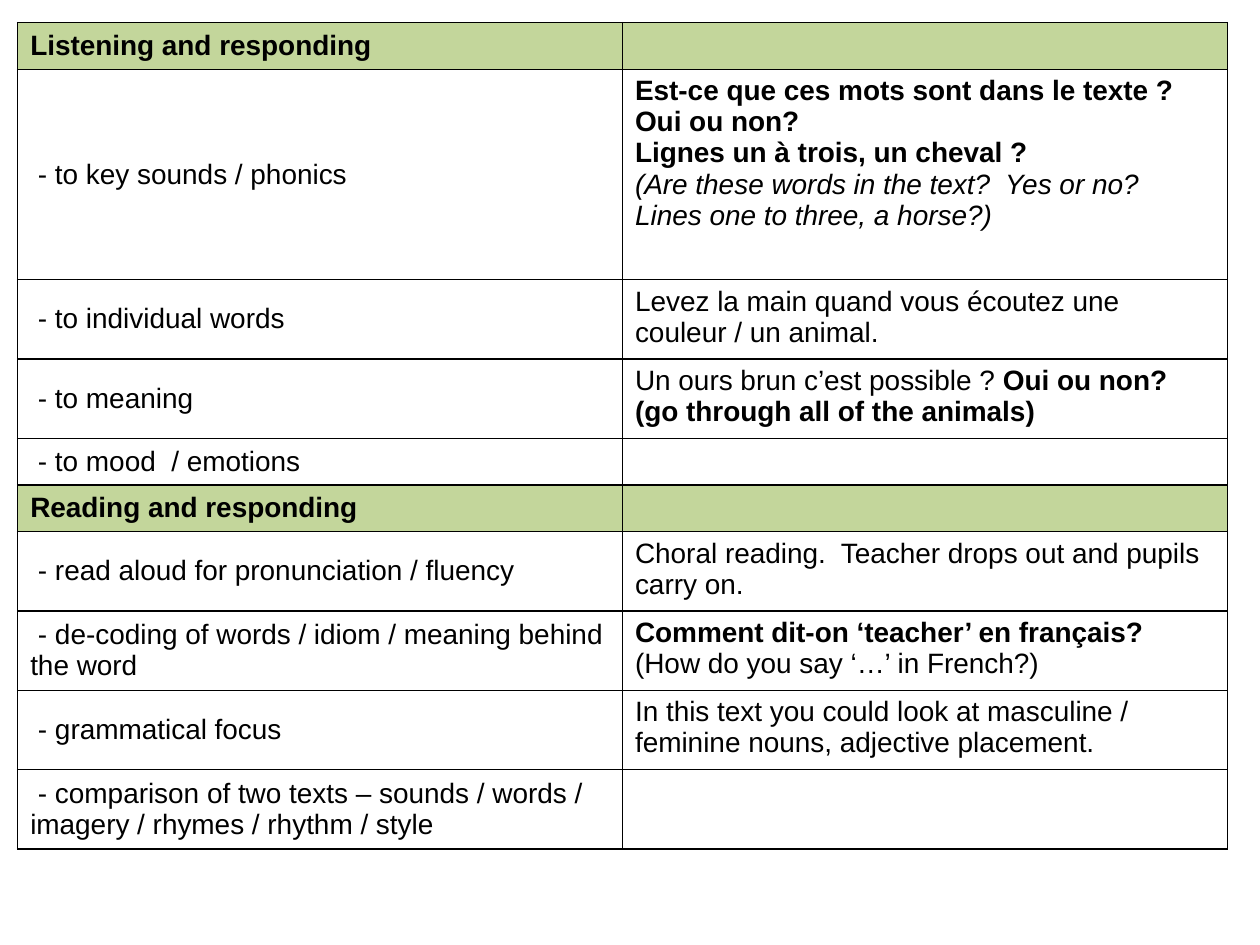
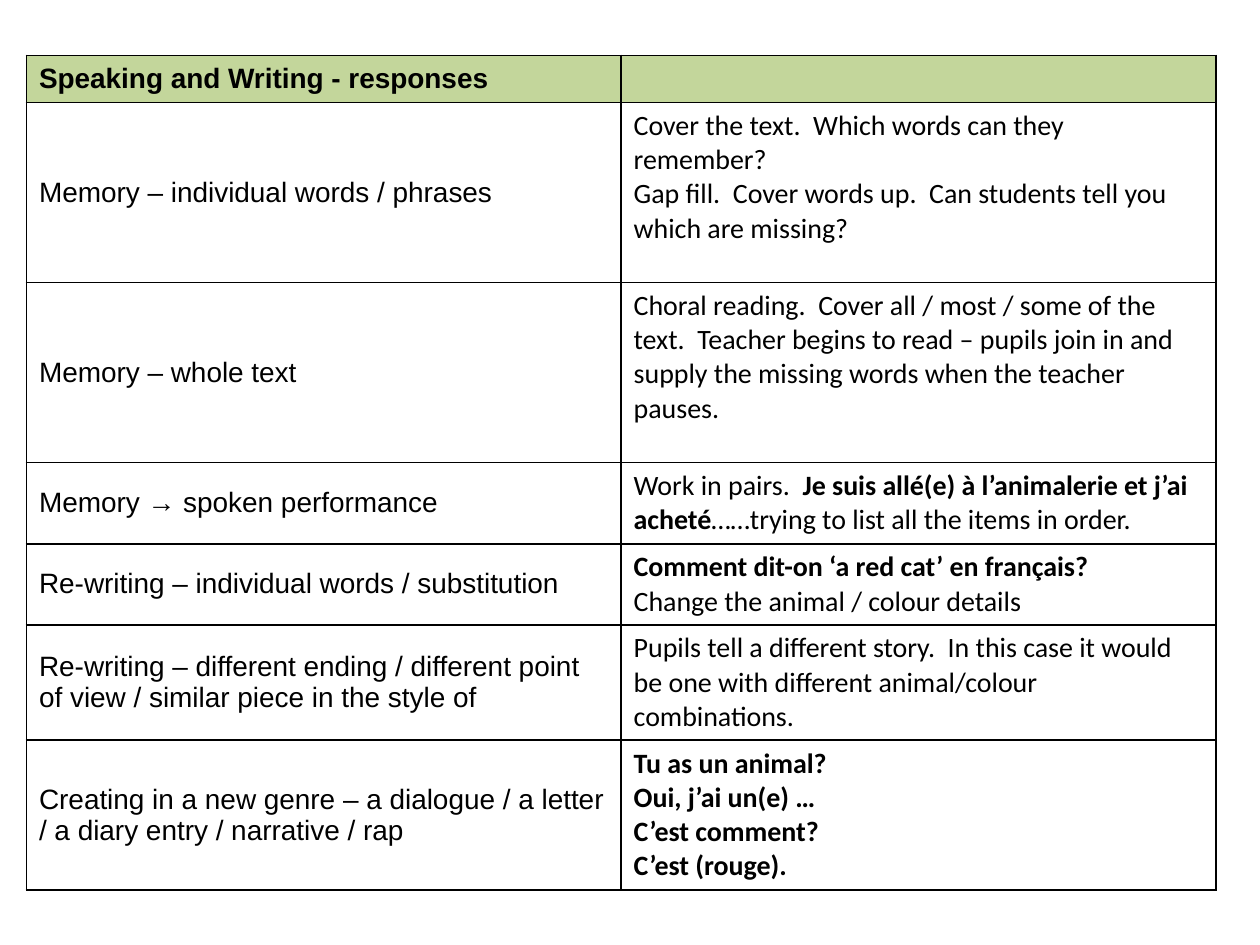
import pptx
import pptx.util
import pptx.dml.color
import pptx.enum.text
import pptx.oxml.ns
import lxml.etree
import dataclasses

Inches = pptx.util.Inches
Pt = pptx.util.Pt
qn = pptx.oxml.ns.qn


@dataclasses.dataclass
class Theme:
    ink: str = "000000"
    band: str = "C3D69B"
    paper: str = "FFFFFF"
    size: int = 16
    border: float = 1
    font: str = "Arial"
    alt_font: str = "Calibri"


theme = Theme()


def add_text(cell, paragraphs, font):
    tf = cell.text_frame
    tf.word_wrap = True
    for i, runs in enumerate(paragraphs):
        p = tf.paragraphs[0] if i == 0 else tf.add_paragraph()
        for text, style in runs:
            for j, line in enumerate(text.split("\n")):
                if j:
                    p.add_line_break()
                if line:
                    r = p.add_run()
                    r.text = line
                    r.font.name = font
                    r.font.size = Pt(theme.size)
                    r.font.bold = style == "bold"
                    r.font.italic = style == "italic"
                    r.font.color.rgb = pptx.dml.color.RGBColor.from_string(theme.ink)
    if not paragraphs:
        end = lxml.etree.SubElement(tf.paragraphs[0]._p, qn("a:endParaRPr"), sz=str(theme.size * 100))
        lxml.etree.SubElement(end, qn("a:latin"), typeface=font)


def add_borders(cell):
    tcPr = cell._tc.get_or_add_tcPr()
    for i, side in enumerate(("lnL", "lnR", "lnT", "lnB")):
        ln = lxml.etree.Element(qn("a:" + side), w=str(int(Pt(theme.border))))
        fill = lxml.etree.SubElement(ln, qn("a:solidFill"))
        lxml.etree.SubElement(fill, qn("a:srgbClr"), val=theme.ink)
        tcPr.insert(i, ln)


listening_reading = [
    (0.37, "Listening and responding", None),
    (1.67, " - to key sounds / phonics", [[
        ("Est-ce que ces mots sont dans le texte ? Oui ou non?\nLignes un à trois, un cheval ?\n", "bold"),
        ("(Are these words in the text?  Yes or no?\nLines one to three, a horse?)", "italic")]]),
    (0.63, " - to individual words", [[
        ("Levez la main quand vous écoutez une couleur / un animal.", "")]]),
    (0.63, " - to meaning", [[
        ("Un ours brun c’est possible ? ", ""),
        ("Oui ou non? (go through all of the animals)", "bold")]]),
    (0.37, " - to mood  / emotions", []),
    (0.37, "Reading and responding", None),
    (0.63, " - read aloud for pronunciation / fluency", [[
        ("Choral reading.  Teacher drops out and pupils carry on.", "")]]),
    (0.63, " - de-coding of words / idiom / meaning behind the word", [[
        ("Comment dit-on ‘teacher’ en français?\n", "bold"),
        ("(How do you say ‘…’ in French?)", "")]]),
    (0.63, " - grammatical focus", [[
        ("In this text you could look at masculine / feminine nouns, adjective placement.", "")]]),
    (0.63, " - comparison of two texts – sounds / words / imagery / rhymes / rhythm / style", []),
]

speaking_writing = [
    (0.37, "Speaking and Writing - responses", None),
    (1.43, "Memory – individual words / phrases", [
        [("Cover the text.  Which words can they remember?", "")],
        [("Gap fill.  Cover words up.  Can students tell you which are missing?", "")]]),
    (1.43, "Memory – whole text", [[
        ("Choral reading.  Cover all / most / some of the text.  Teacher begins to read – "
         "pupils join in and supply the missing words when the teacher pauses.", "")]]),
    (0.63, "Memory → spoken performance", [[
        ("Work in pairs.  ", ""),
        ("Je suis allé(e) à l’animalerie et j’ai acheté", "bold"),
        ("……trying to list all the items in order.", "")]]),
    (0.63, "Re-writing – individual words / substitution", [
        [("Comment dit-on ‘a red cat’ en français?", "bold")],
        [("Change the animal / colour details", "")]]),
    (0.9, "Re-writing – different ending / different point of view / similar piece in the style of", [[
        ("Pupils tell a different story.  In this case it would be one with different "
         "animal/colour combinations.", "")]]),
    (1.17, "Creating in a new genre – a dialogue / a letter / a diary entry / narrative / rap", [[
        ("Tu as un animal?\nOui, j’ai un(e) …\nC’est comment?\nC’est (rouge).", "bold")]]),
]

prs = pptx.Presentation()
prs.slide_width = Inches(10)
prs.slide_height = Inches(7.5)

for left, top, width, example_font, rows in (
    (0.14, 0.18, 9.6, theme.font, listening_reading),
    (0.21, 0.44, 9.44, theme.alt_font, speaking_writing),
):
    s = prs.slides.add_slide(prs.slide_layouts[6])
    height = sum(row[0] for row in rows)
    sp = s.shapes.add_table(len(rows), 2, Inches(left), Inches(top), Inches(width), Inches(height))
    table = sp.table
    table.first_row = False
    table.horz_banding = False
    for column in table.columns:
        column.width = Inches(width / 2)
    for i, (row_height, activity, examples) in enumerate(rows):
        table.rows[i].height = Inches(row_height)
        is_heading = examples is None
        skill_cell, example_cell = table.cell(i, 0), table.cell(i, 1)
        add_text(skill_cell, [[(activity, "bold" if is_heading else "")]], theme.font)
        add_text(example_cell, examples or [], example_font)
        skill_cell.vertical_anchor = pptx.enum.text.MSO_ANCHOR.MIDDLE
        example_cell.vertical_anchor = pptx.enum.text.MSO_ANCHOR.TOP
        for cell in (skill_cell, example_cell):
            cell.fill.solid()
            cell.fill.fore_color.rgb = pptx.dml.color.RGBColor.from_string(
                theme.band if is_heading else theme.paper)
            add_borders(cell)

prs.save("out.pptx")
